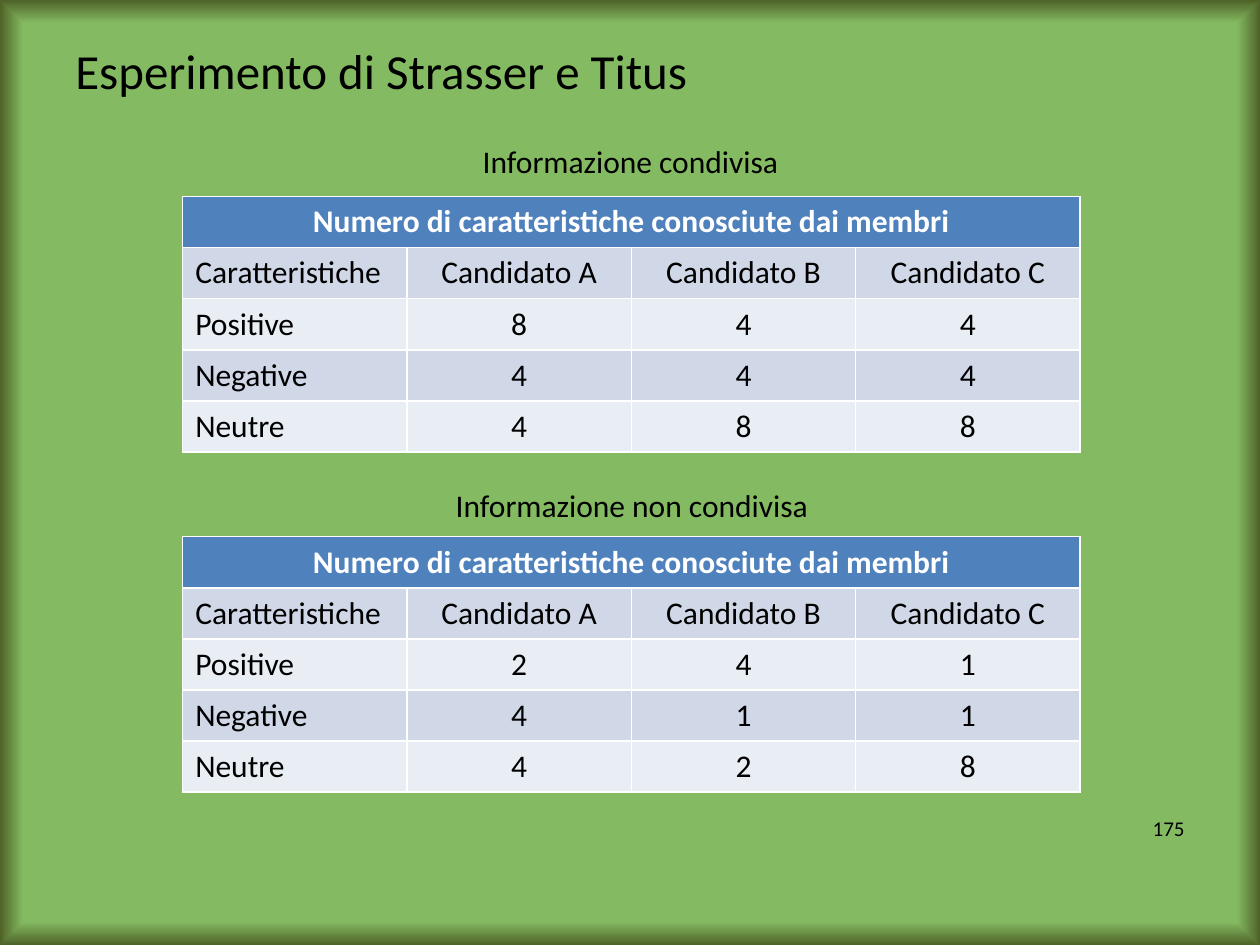
from lxml.etree import SubElement
from pptx import Presentation
from pptx.dml.color import RGBColor
from pptx.enum.text import MSO_ANCHOR, MSO_AUTO_SIZE, PP_ALIGN as Align
from pptx.oxml.ns import qn
from pptx.util import Pt

COLORS = {
    "green": "84BB62", "edge": "4F6228", "header": "4F81BD",
    "dark_band": "D0D8E8", "light_band": "E9EDF4",
    "black": "000000", "white": "FFFFFF",
}
HEADING = "Numero di caratteristiche conosciute dai membri"
COLUMNS = ["Caratteristiche", "Candidato A", "Candidato B", "Candidato C"]
TRAITS = ["Positive", "Negative", "Neutre"]
TABLE_LEFT, COLUMN_WIDTH, ROW_HEIGHT = 104.4, 128.2, 29.2


def write(frame, text, size, align, color="black", bold=False):
    frame.text = text
    paragraph = frame.paragraphs[0]
    paragraph.alignment = align
    font = paragraph.runs[0].font
    font.name, font.size, font.bold = "Calibri", Pt(size), bold
    font.color.rgb = RGBColor.from_string(COLORS[color])


def add_label(text, left, top, width, height, size, align, wrap=True):
    frame = slide.shapes.add_textbox(Pt(left), Pt(top), Pt(width), Pt(height)).text_frame
    frame.word_wrap = wrap
    write(frame, text, size, align)
    return frame


prs = Presentation()
prs.slide_width, prs.slide_height = Pt(720), Pt(540)
slide = prs.slides.add_slide(prs.slide_layouts[6])

# Green background that darkens towards the slide edges
backdrop = slide.background.fill
backdrop.gradient()
for stop, color, position in zip(backdrop.gradient_stops, ("green", "edge"), (0.95, 1)):
    stop.color.rgb = RGBColor.from_string(COLORS[color])
    stop.position = position
gradient = slide.element.find(".//" + qn("a:gradFill"))
gradient.remove(gradient.find(qn("a:lin")))
focus = SubElement(gradient, qn("a:path"))
focus.set("path", "shape")
center = SubElement(focus, qn("a:fillToRect"))
for side in "ltrb":
    center.set(side, "50000")

title = add_label("Esperimento di Strasser e Titus", 36, 19.4, 648, 49.7, 28, Align.JUSTIFY)
title.paragraphs[0].space_before = Pt(5.6)
number = add_label("175", 516.2, 458.6, 167.8, 28.8, 12, Align.RIGHT)
number.vertical_anchor = MSO_ANCHOR.MIDDLE

# Caption, its left, top and width, table top, scores per trait
experiments = [
    ("Informazione condivisa", 267.8, 77.8, 185, 112.3,
     [[8, 4, 4], [4, 4, 4], [4, 8, 8]]),
    ("Informazione non condivisa", 252, 274.3, 218.2, 306.7,
     [[2, 4, 1], [4, 1, 1], [4, 2, 8]]),
]
for caption, left, top, width, table_top, scores in experiments:
    frame = add_label(caption, left, top, width, 28.8, 18, Align.CENTER, wrap=False)
    frame.auto_size = MSO_AUTO_SIZE.SHAPE_TO_FIT_TEXT

    rows = [COLUMNS] + [[trait, *values] for trait, values in zip(TRAITS, scores)]
    table = slide.shapes.add_table(
        len(rows) + 1, len(COLUMNS), Pt(TABLE_LEFT), Pt(table_top),
        Pt(COLUMN_WIDTH * len(COLUMNS)), Pt(ROW_HEIGHT * (len(rows) + 1))).table
    heading = table.cell(0, 0)
    heading.merge(table.cell(0, len(COLUMNS) - 1))
    heading.fill.solid()
    heading.fill.fore_color.rgb = RGBColor.from_string(COLORS["header"])
    write(heading.text_frame, HEADING, 18, Align.CENTER, "white", bold=True)

    for r, row in enumerate(rows, start=1):
        band = COLORS["dark_band" if r % 2 else "light_band"]
        for c, value in enumerate(row):
            cell = table.cell(r, c)
            cell.fill.solid()
            cell.fill.fore_color.rgb = RGBColor.from_string(band)
            write(cell.text_frame, str(value), 18, Align.CENTER if c else Align.LEFT)

prs.save("out.pptx")
